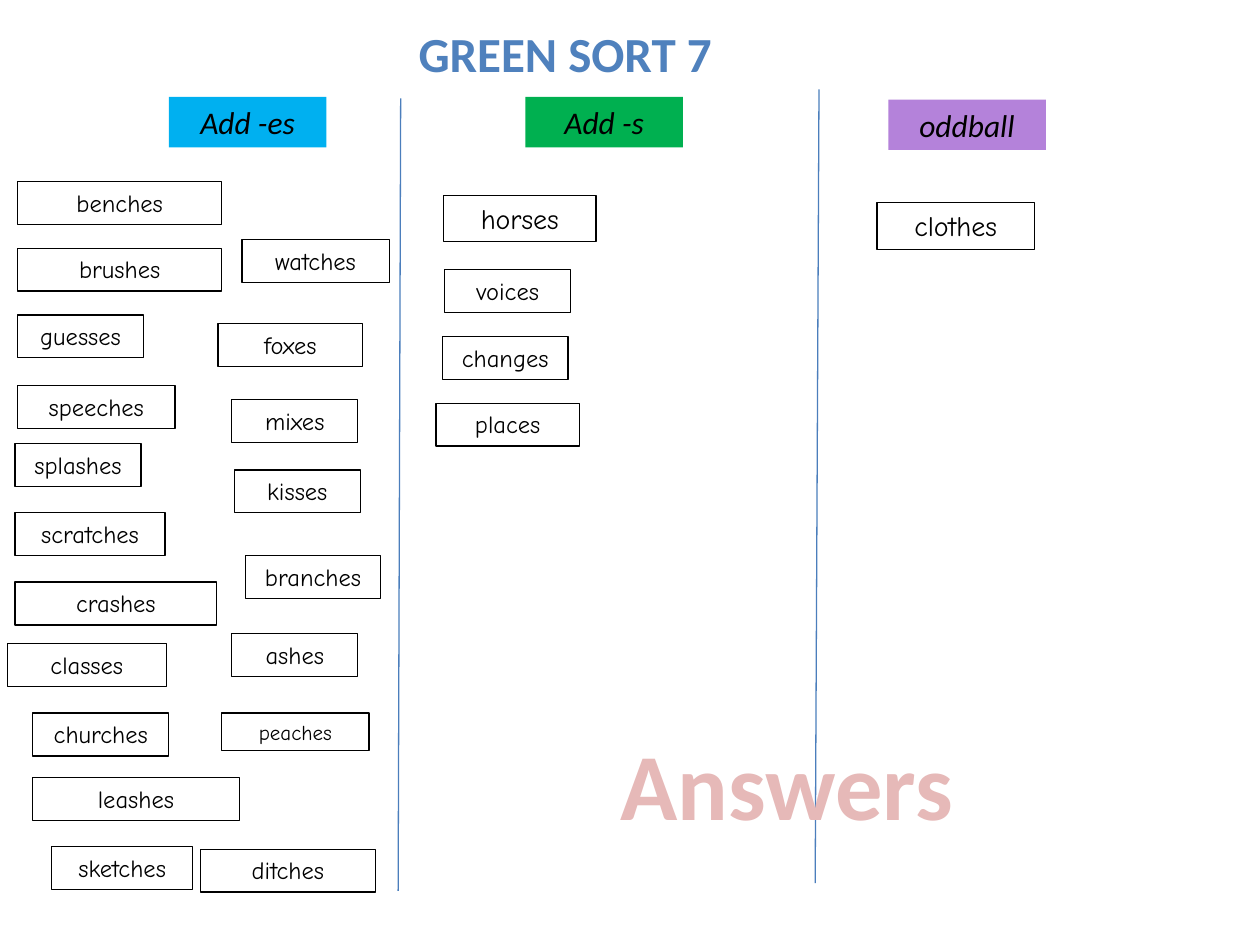
from lxml import etree
from pptx import Presentation
from pptx import util as u
from pptx.dml.color import RGBColor
from pptx.enum import shapes, text
from pptx.oxml.ns import qn

COLUMNS, ROWS = 100, 75
CARD_HEIGHTS = {12: 3, 14: 3.4, 16: 3.7}

HEADINGS = [
    ("Add -es", 13.4, 7.7, "00B0F0"),
    ("Add -s", 41.7, 7.7, "00B050"),
    ("oddball", 70.5, 7.9, "B482DA"),
]
DIVIDERS = [(31.8, 7.8, 31.6, 70.7), (65, 7.1, 64.7, 70.1)]
ES_LEFT = [
    ("benches", 1.4, 14.4, 16.2),
    ("brushes", 1.4, 19.7, 16.2),
    ("guesses", 1.4, 25, 10),
    ("speeches", 1.4, 30.6, 12.5),
    ("splashes", 1.2, 35.2, 10),
    ("scratches", 1.2, 40.7, 11.9),
    ("crashes", 1.2, 46.2, 16),
    ("classes", 0.6, 51.1, 12.6),
    ("churches", 2.6, 56.6, 10.8),
    ("leashes", 2.6, 61.7, 16.4),
    ("sketches", 4.1, 67.2, 11.2),
]
ES_RIGHT = [
    ("watches", 19.2, 19, 11.7),
    ("foxes", 17.3, 25.7, 11.5),
    ("mixes", 18.4, 31.7, 10),
    ("kisses", 18.6, 37.3, 10),
    ("branches", 19.5, 44.1, 10.7),
    ("ashes", 18.4, 50.3, 10),
    ("peaches", 17.6, 56.6, 11.7, 12),
    ("ditches", 15.9, 67.4, 13.9),
]
S_WORDS = [
    ("horses", 35.2, 15.5, 12.1, 16),
    ("voices", 35.3, 21.4, 10),
    ("changes", 35.1, 26.7, 10),
    ("places", 34.6, 32, 11.4),
]
ODDBALLS = [("clothes", 69.6, 16.1, 12.5, 16)]


def color(code):
    """Turn a hex string into a colour."""
    return RGBColor.from_string(code)


class SortPage:
    """Hold the style and the current slide of a word sort."""

    heading_font = "Calibri"
    word_font = "Comic Neue"
    ink = "000000"
    divider_ink = "4B7EBC"
    thin = u.Pt(0.75)

    def __init__(self, deck):
        """Add a blank slide to the deck."""
        self.page = deck.slides.add_slide(deck.slide_layouts[6])
        self.column = deck.slide_width / COLUMNS
        self.row = deck.slide_height / ROWS

    def place(self, x, y, across, down):
        """Turn grid columns and rows into slide lengths."""
        return [round(size * unit) for size, unit in
                zip((x, y, across, down), (self.column, self.row) * 2)]

    def letter(self, box, words, code, wrap=True, **looks):
        """Put one centred line of styled text in a box."""
        frame = box.text_frame
        frame.word_wrap = wrap
        para = frame.paragraphs[0]
        para.alignment = text.PP_ALIGN.CENTER
        span = para.add_run()
        span.text = words
        for name, value in looks.items():
            setattr(span.font, name, value)
        span.font.color.rgb = color(code)

    def rectangle(self, x, y, across, down):
        """Add a plain rectangle with its text at the top."""
        box = self.page.shapes.add_shape(
            shapes.MSO_SHAPE.RECTANGLE, *self.place(x, y, across, down))
        box.shadow.inherit = False
        box.text_frame.vertical_anchor = text.MSO_ANCHOR.TOP
        return box

    def heading(self, words, x, y, fill):
        """Add a coloured column heading."""
        box = self.rectangle(x, y, 12.5, 4)
        box.fill.solid()
        box.fill.fore_color.rgb = color(fill)
        box.line.fill.background()
        self.letter(box, words, self.ink, name=self.heading_font,
                    size=u.Pt(18), italic=True)

    def card(self, words, x, y, across, size=14):
        """Add an outlined word card."""
        box = self.rectangle(x, y, across, CARD_HEIGHTS[size])
        box.fill.background()
        box.line.color.rgb = color(self.ink)
        box.line.width = self.thin
        self.letter(box, words, self.ink, name=self.word_font, size=u.Pt(size))

    def label(self, words, x, y, across, down, size, code, wrap=True):
        """Add bold text without a frame."""
        box = self.page.shapes.add_textbox(*self.place(x, y, across, down))
        self.letter(box, words, code, wrap, name=self.heading_font,
                    size=u.Pt(size), bold=True)

    def divider(self, *ends):
        """Add a thin line between two columns."""
        line = self.page.shapes.add_connector(
            shapes.MSO_CONNECTOR.STRAIGHT, *self.place(*ends))
        line.line.color.rgb = color(self.divider_ink)
        line.line.width = self.thin
        etree.SubElement(line._element.spPr, qn("a:effectLst"))


def main():
    """Build the sorted word page."""
    deck = Presentation()
    deck.slide_width, deck.slide_height = u.Inches(10), u.Inches(7.5)
    sort = SortPage(deck)
    sort.label("GREEN SORT 7", 21.8, 1.4, 46.1, 5.7, 28, "4F81BD")
    for ends in DIVIDERS:
        sort.divider(*ends)
    for heading in HEADINGS:
        sort.heading(*heading)
    for word in ES_LEFT + ES_RIGHT + S_WORDS + ODDBALLS:
        sort.card(*word)
    sort.label("Answers", 48.1, 57.1, 28.7, 10.1, 54, "E6B9B8", wrap=False)
    deck.save("out.pptx")


if __name__ == "__main__":
    main()
